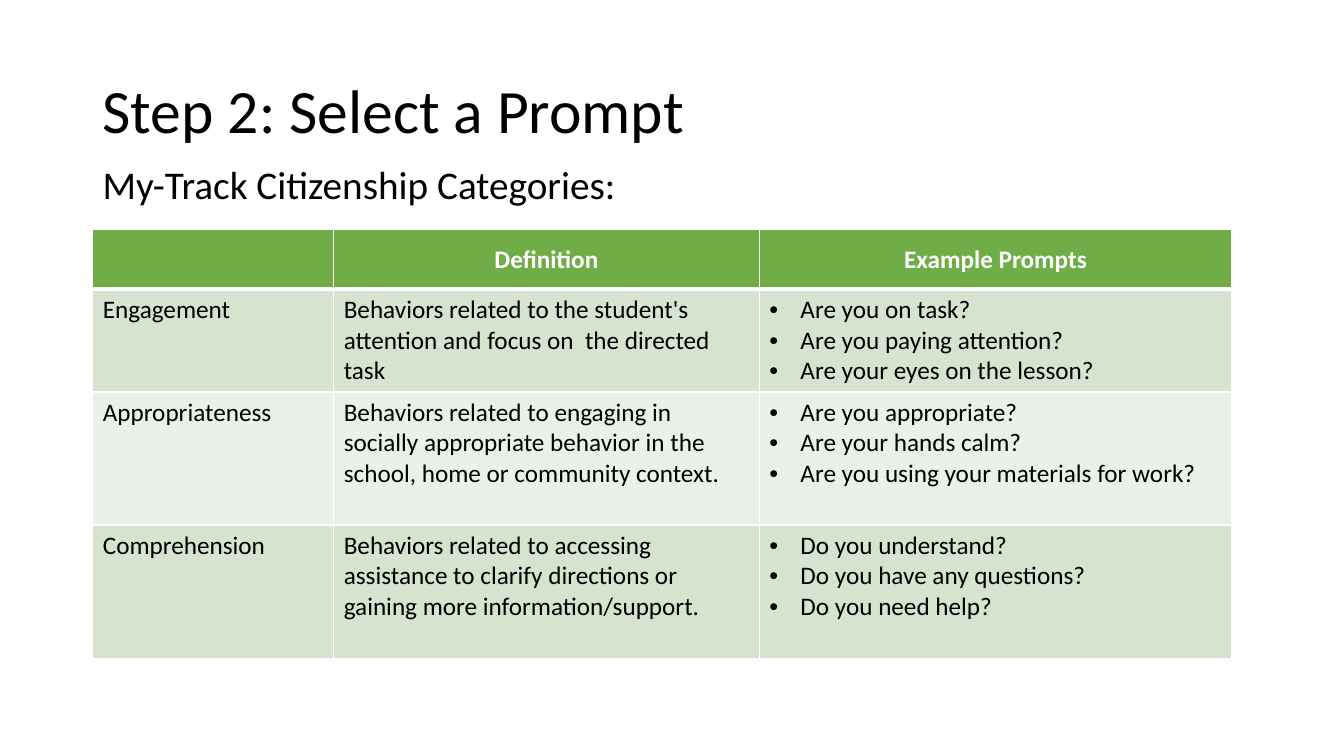
from lxml.etree import SubElement
from pptx import Presentation
from pptx.dml.color import RGBColor
from pptx.enum.text import MSO_ANCHOR, PP_ALIGN
from pptx.oxml.ns import qn
from pptx.util import Inches, Pt

WIDTH, HEIGHT = 13.33, 7.5
LEFT = 0.92 / WIDTH
COLUMN_WIDTHS = [2.39, 4.22, 4.69]
ROW_HEIGHTS = [0.59, 1.02, 1.32, 1.32]
HEADINGS = ["", "Definition", "Example Prompts"]
CATEGORIES = [
    ("Engagement",
     "Behaviors related to the student's attention and focus on  the directed task",
     ["Are you on task?", "Are you paying attention?", "Are your eyes on the lesson?"]),
    ("Appropriateness",
     "Behaviors related to engaging in socially appropriate behavior in the school, "
     "home or community context.",
     ["Are you appropriate?", "Are your hands calm?",
      "Are you using your materials for work?"]),
    ("Comprehension",
     "Behaviors related to accessing assistance to clarify directions or gaining "
     "more information/support.",
     ["Do you understand?", "Do you have any questions?", "Do you need help?"]),
]


def color(value):
    return RGBColor.from_string(value)


class SlideBuilder:
    font_name = "Calibri"
    black, white, green = "000000", "FFFFFF", "70AD47"
    bands = ["D5E3CF", "EBF1E9"]

    def __init__(self, presentation):
        self.width = presentation.slide_width
        self.height = presentation.slide_height
        self.slide = presentation.slides.add_slide(presentation.slide_layouts[6])

    def place(self, left, top, width, height):
        """Turn shares of the slide into lengths."""
        return (int(left * self.width), int(top * self.height),
                int(width * self.width), int(height * self.height))

    def style(self, paragraph, size, text_color, bold=False):
        font = paragraph.font
        font.name, font.size, font.bold = self.font_name, Pt(size), bold
        font.color.rgb = color(text_color)

    def text(self, words, box, size, anchor):
        frame = self.slide.shapes.add_textbox(*self.place(*box)).text_frame
        frame.word_wrap = True
        frame.vertical_anchor = anchor
        frame.text = words
        paragraph = frame.paragraphs[0]
        paragraph.line_spacing = 0.9
        self.style(paragraph, size, self.black)

    def bullet(self, paragraph):
        properties = paragraph._p.get_or_add_pPr()
        properties.set("marL", str(Inches(0.31)))
        properties.set("indent", str(-Inches(0.31)))
        SubElement(properties, qn("a:buFont"), typeface="Arial")
        SubElement(properties, qn("a:buChar"), char="•")

    def borders(self, cell, top, bottom):
        properties = cell._tc.get_or_add_tcPr()
        for side, points in (("L", 1), ("R", 1), ("T", top), ("B", bottom)):
            line = SubElement(properties, qn(f"a:ln{side}"), w=str(Pt(points)))
            fill = SubElement(line, qn("a:solidFill"))
            SubElement(fill, qn("a:srgbClr"), val=self.white)

    def cell(self, cell, content, row):
        header = row == 0
        self.borders(cell, top=3 if row == 1 else 1, bottom=3 if header else 1)
        cell.fill.solid()
        cell.fill.fore_color.rgb = color(self.green if header else self.bands[(row - 1) % 2])
        cell.vertical_anchor = MSO_ANCHOR.MIDDLE if header else MSO_ANCHOR.TOP
        bulleted = isinstance(content, list)
        cell.text_frame.text = "\n".join(content) if bulleted else content
        for paragraph in cell.text_frame.paragraphs:
            if bulleted:
                self.bullet(paragraph)
            if header:
                paragraph.alignment = PP_ALIGN.CENTER
            self.style(paragraph, 18, self.white if header else self.black, header)

    def table(self, rows, left, top):
        box = self.place(left, top, sum(COLUMN_WIDTHS) / WIDTH, sum(ROW_HEIGHTS) / HEIGHT)
        table = self.slide.shapes.add_table(len(rows), len(COLUMN_WIDTHS), *box).table
        table.horz_banding = False
        for column, width in zip(table.columns, COLUMN_WIDTHS):
            column.width = Inches(width)
        for row, height in zip(table.rows, ROW_HEIGHTS):
            row.height = Inches(height)
        for row_index, contents in enumerate(rows):
            for column_index, content in enumerate(contents):
                self.cell(table.cell(row_index, column_index), content, row_index)


def main():
    presentation = Presentation()
    presentation.slide_width = Inches(WIDTH)
    presentation.slide_height = Inches(HEIGHT)
    builder = SlideBuilder(presentation)
    text_width = 11.5 / WIDTH

    # Title and subtitle
    builder.text("Step 2: Select a Prompt",
                 (LEFT, 0.4 / HEIGHT, text_width, 1.45 / HEIGHT), 44, MSO_ANCHOR.MIDDLE)
    builder.text("My-Track Citizenship Categories:",
                 (LEFT, 1.59 / HEIGHT, text_width, 0.6 / HEIGHT), 28, MSO_ANCHOR.TOP)

    # Category table
    builder.table([HEADINGS, *CATEGORIES], LEFT, 2.28 / HEIGHT)

    presentation.save("out.pptx")


if __name__ == "__main__":
    main()
